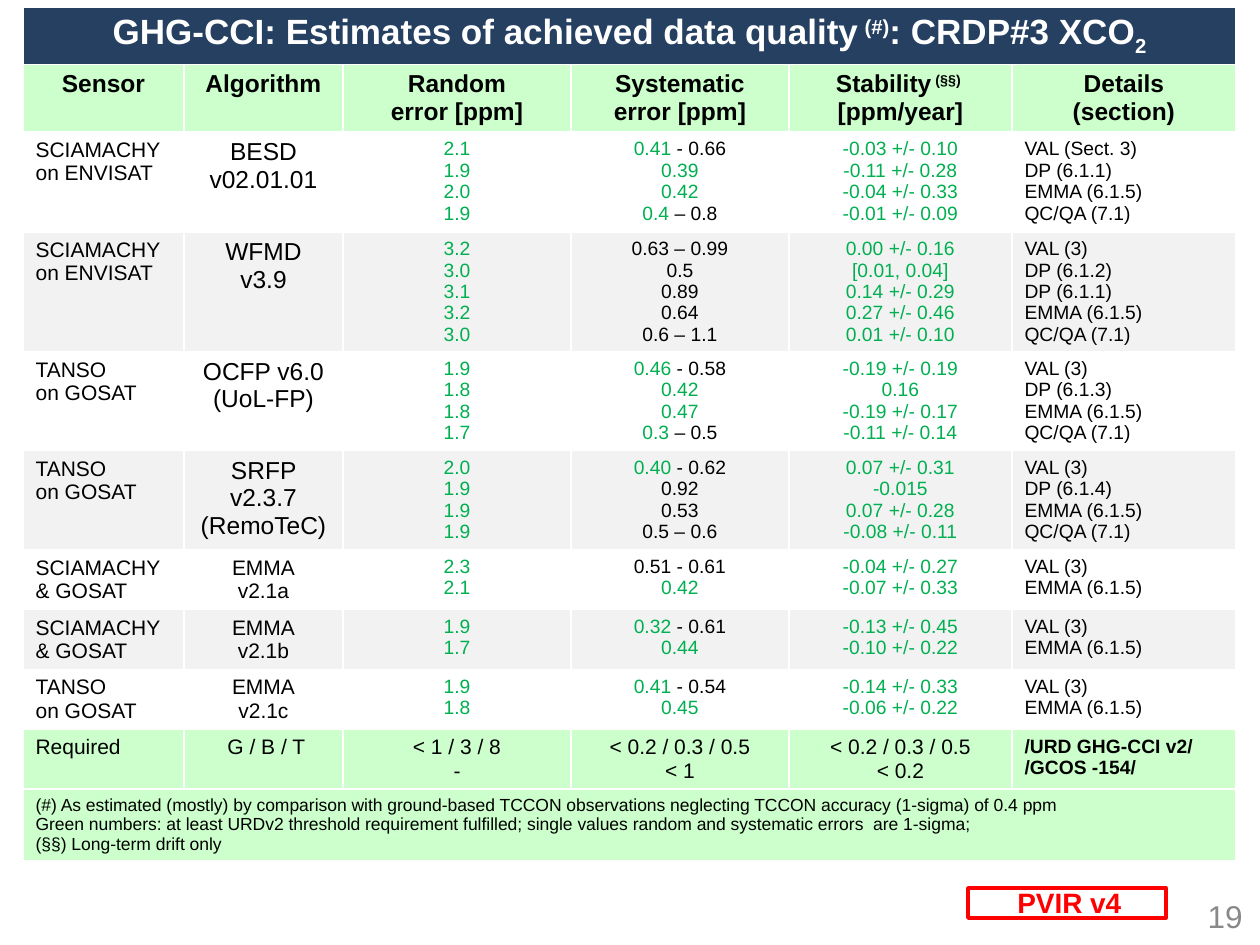
import pptx
import pptx.dml.color
import pptx.enum.shapes
import pptx.enum.text
import pptx.util

PX = 914400 // 126
ALIGN = pptx.enum.text.PP_ALIGN
ANCHOR = pptx.enum.text.MSO_ANCHOR

COLS = [161, 159, 228, 218, 223, 224]
ROWS = [57, 67, 100, 118, 99, 99, 60, 59, 60, 59, 72]
NAVY, MINT, GREEN, BLACK, RED = "254061", "CCFFCC", "00B050", "000000", "FF0000"
BANDS = ["FFFFFF", "F2F2F2"]

TITLE = [("GHG-CCI: Estimates of achieved data quality", 0), (" (#)", 30),
         (": CRDP#3 XCO", 0), ("2", -25)]
HEADERS = [
    [[("Sensor", 0)]],
    [[("Algorithm", 0)]],
    [[("Random", 0)], [("error [ppm]", 0)]],
    [[("Systematic", 0)], [("error [ppm]", 0)]],
    [[("Stability", 0), (" (§§) ", 30)], [("[ppm/year]", 0)]],
    [[("Details", 0)], [("(section)", 0)]],
]
# Sensor, algorithm, algorithm size, random, systematic, stability, details.
# In a systematic error, text before "|" meets the threshold and is green.
RESULTS = [
    ("SCIAMACHY\non ENVISAT", "BESD v02.01.01", 14, "2.1\n1.9\n2.0\n1.9",
     "0.41 |- 0.66\n0.39\n0.42\n0.4| – 0.8",
     "-0.03 +/- 0.10\n-0.11 +/- 0.28\n-0.04 +/- 0.33\n-0.01 +/- 0.09",
     "VAL (Sect. 3)\nDP (6.1.1)\nEMMA (6.1.5)\nQC/QA (7.1)"),
    ("SCIAMACHY\non ENVISAT", "WFMD\nv3.9", 14, "3.2\n3.0\n3.1\n3.2\n3.0",
     "|0.63 – 0.99\n|0.5\n|0.89\n|0.64\n|0.6 – 1.1",
     "0.00 +/- 0.16\n[0.01, 0.04]\n0.14 +/- 0.29\n0.27 +/- 0.46\n0.01 +/- 0.10",
     "VAL (3)\nDP (6.1.2)\nDP (6.1.1)\nEMMA (6.1.5)\nQC/QA (7.1)"),
    ("TANSO\non GOSAT", "OCFP v6.0\n(UoL-FP)", 14, "1.9\n1.8\n1.8\n1.7",
     "0.46| - 0.58\n0.42\n0.47\n0.3 |– 0.5",
     "-0.19 +/- 0.19\n0.16\n-0.19 +/- 0.17\n-0.11 +/- 0.14",
     "VAL (3)\nDP (6.1.3)\nEMMA (6.1.5)\nQC/QA (7.1)"),
    ("TANSO\non GOSAT", "SRFP v2.3.7\n(RemoTeC)", 14, "2.0\n1.9\n1.9\n1.9",
     "0.40 |- 0.62\n|0.92\n|0.53\n|0.5 – 0.6",
     "0.07 +/- 0.31\n-0.015\n0.07 +/- 0.28\n-0.08 +/- 0.11",
     "VAL (3)\nDP (6.1.4)\nEMMA (6.1.5)\nQC/QA (7.1)"),
    ("SCIAMACHY & GOSAT", "EMMA\nv2.1a", 12, "2.3\n2.1", "|0.51 - 0.61\n0.42",
     "-0.04 +/- 0.27\n-0.07 +/- 0.33", "VAL (3)\nEMMA (6.1.5)"),
    ("SCIAMACHY & GOSAT", "EMMA\nv2.1b", 12, "1.9\n1.7", "0.32 |- 0.61\n0.44",
     "-0.13 +/- 0.45\n-0.10 +/- 0.22", "VAL (3)\nEMMA (6.1.5)"),
    ("TANSO\non GOSAT", "EMMA\nv2.1c", 12, "1.9\n1.8", "0.41 |- 0.54\n0.45",
     "-0.14 +/- 0.33\n-0.06 +/- 0.22", "VAL (3)\nEMMA (6.1.5)"),
]
REQUIRED = ["Required", " G / B / T", "< 1 / 3 / 8\n-", "< 0.2 / 0.3 / 0.5\n< 1",
            "< 0.2 / 0.3 / 0.5\n< 0.2", "/URD GHG-CCI v2/\n/GCOS -154/"]
NOTES = """(#) As estimated (mostly) by comparison with ground-based TCCON observations neglecting TCCON accuracy (1-sigma) of 0.4 ppm
Green numbers: at least URDv2 threshold requirement fulfilled; single values random and systematic errors  are 1-sigma;
(§§) Long-term drift only"""


def rgb(value):
    return pptx.dml.color.RGBColor.from_string(value)


def px(*values):
    return [v * PX for v in values]


def lines(text):
    return [[(line, 0)] for line in text.split("\n")]


class SlideBuilder:
    def __init__(self, slide, font="Arial"):
        self.slide = slide
        self.font = font

    def fill_text(self, tf, paragraphs, size, color=BLACK, bold=False, align=ALIGN.LEFT):
        """Fill a frame with paragraphs of (text, baseline percent[, colour]) runs."""
        fmt = {"name": self.font, "size": pptx.util.Pt(size), "bold": bold}
        for i, runs in enumerate(paragraphs):
            p = tf.add_paragraph() if i else tf.paragraphs[0]
            p.alignment = align
            for text, base, *own_color in runs:
                r = p.add_run()
                r.text = text
                for name, value in fmt.items():
                    setattr(r.font, name, value)
                r.font.color.rgb = rgb(own_color[0] if own_color else color)
                if base:
                    r.font._element.set("baseline", str(base * 1000))

    def table(self, x, y, cols, rows):
        sp = self.slide.shapes.add_table(len(rows), len(cols), *px(x, y, sum(cols), sum(rows)))
        tbl = sp.table
        tbl.horz_banding = False
        for column, width in zip(tbl.columns, cols):
            column.width = width * PX
        for row, height in zip(tbl.rows, rows):
            row.height = height * PX
        return tbl

    def cell(self, cell, fill, paragraphs, size, **style):
        cell.fill.solid()
        cell.fill.fore_color.rgb = rgb(fill)
        self.fill_text(cell.text_frame, paragraphs, size, **style)

    def frame(self, shapes, box, color, width):
        sp = shapes.add_shape(pptx.enum.shapes.MSO_SHAPE.RECTANGLE, *px(*box))
        sp.shadow.inherit = False
        sp.fill.solid()
        sp.fill.fore_color.rgb = rgb("FFFFFF")
        sp.line.color.rgb = rgb(color)
        sp.line.width = pptx.util.Pt(width)

    def text(self, shapes, box, text, size, anchor=ANCHOR.TOP, **style):
        tf = shapes.add_textbox(*px(*box)).text_frame
        tf.word_wrap = True
        tf.vertical_anchor = anchor
        self.fill_text(tf, lines(text), size, **style)


def threshold_runs(text):
    """Colour the part of each line before "|" green and the rest black."""
    paragraphs = []
    for line in text.split("\n"):
        met, _, missed = line.partition("|")
        paragraphs.append([(t, 0, c) for t, c in ((met, GREEN), (missed, BLACK)) if t])
    return paragraphs


def fill_table(b):
    tbl = b.table(23, 7, COLS, ROWS)
    last_row, last_col = len(ROWS) - 1, len(COLS) - 1
    center = {"align": ALIGN.CENTER}
    for row in (0, last_row):
        tbl.cell(row, 0).merge(tbl.cell(row, last_col))

    b.cell(tbl.cell(0, 0), NAVY, [TITLE], 20, color="FFFFFF", bold=True, **center)
    for col, header in enumerate(HEADERS):
        b.cell(tbl.cell(1, col), MINT, header, 14, bold=True, **center)

    for i, (sensor, algorithm, size, random, systematic, stability, details) in enumerate(RESULTS):
        cells = [
            (lines(sensor), 12, {}),
            (lines(algorithm), size, center),
            (threshold_runs(random), 11, center),
            (threshold_runs(systematic), 11, center),
            (threshold_runs(stability), 11, center),
            (lines(details), 11, {}),
        ]
        for col, (paragraphs, pt, style) in enumerate(cells):
            b.cell(tbl.cell(i + 2, col), BANDS[i % 2], paragraphs, pt, **style)

    for col, text in enumerate(REQUIRED):
        source = col == last_col
        style = {} if col in (0, last_col) else center
        b.cell(tbl.cell(last_row - 1, col), MINT, lines(text), 11 if source else 12,
               bold=source, **style)
    b.cell(tbl.cell(last_row, 0), MINT, lines(NOTES), 10)


def main():
    prs = pptx.Presentation()
    prs.slide_width, prs.slide_height = px(1260, 945)
    b = SlideBuilder(prs.slides.add_slide(prs.slide_layouts[6]))
    fill_table(b)

    stamp = b.slide.shapes.add_group_shape().shapes
    b.frame(stamp, (968, 888, 198, 30), RED, 2)
    b.text(stamp, (1005, 879, 149, 47), "PVIR v4", 16, color=RED, bold=True)
    b.text(b.slide.shapes, (1116, 891, 139, 50), "19", 18, anchor=ANCHOR.MIDDLE,
           color="898989", align=ALIGN.RIGHT)
    prs.save("out.pptx")


if __name__ == "__main__":
    main()
